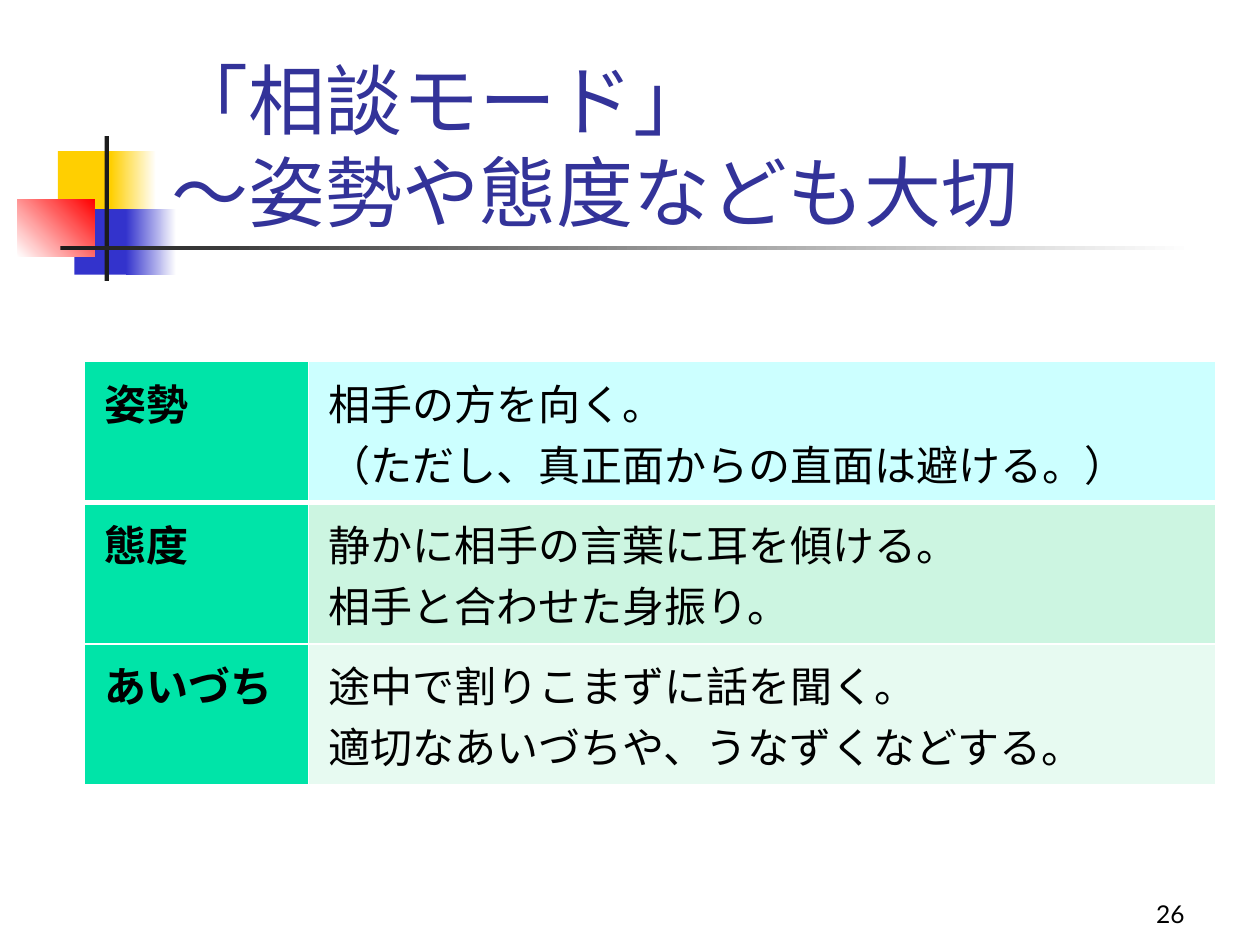
import pptx
import pptx.util
import pptx.dml.color
import pptx.enum.shapes
import pptx.enum.text
import pptx.oxml
import pptx.oxml.ns

WIDE, HIGH = 10, 7.5
LATIN, KANJI = "Lato", "Noto Sans CJK JP"
HUES = {
    "gold": "FFCF01", "blue": "3333CC", "red": "FF0000", "dark": "1C1C1C",
    "white": "FFFFFF", "title": "333399", "text": "000000", "head": "00E4A8",
    "sky": "CCFFFF", "mint": "CCF5E1", "pale": "E7FAF1",
}
ROWS = [
    ("姿勢", "相手の方を向く。\n（ただし、真正面からの直面は避ける。）", "sky"),
    ("態度", "静かに相手の言葉に耳を傾ける。\n相手と合わせた身振り。", "mint"),
    ("あいづち", "途中で割りこまずに話を聞く。\n適切なあいづちや、うなずくなどする。", "pale"),
]
# Percent of slide width and height, then one hue or a blend of two, and its angle
DECOR = [
    ((4.6, 16, 4.8, 6.93), ("gold",), 0),
    ((8.8, 16, 3.6, 6.93), ("gold", "white"), 0),
    ((5.9, 22.13, 4.6, 6.93), ("blue",), 0),
    ((10, 22.13, 4, 6.93), ("blue", "white"), 0),
    ((1.4, 21.07, 6.1, 6.13), ("white", "red"), 45),
    ((8.3, 14.4, 0.35, 15.33), ("dark",), 0),
    ((4.8, 26, 90, 0.45), ("dark", "white"), 0),
]


def hue(name):
    return pptx.dml.color.RGBColor.from_string(HUES[name])


def share(x, y, w, h):
    """Turn percentages of the slide into lengths."""
    return [pptx.util.Inches(part * side / 100)
            for part, side in zip((x, y, w, h), (WIDE, HIGH) * 2)]


def style(para, size, tint, east=KANJI, bold=False, align=None):
    font = para.font
    font.name, font.size, font.bold = LATIN, pptx.util.Pt(size), bold
    font.color.rgb = hue(tint)
    para.alignment = align
    # East Asian face must be set on each run to take effect
    for run in para.runs:
        props = run._r.get_or_add_rPr()
        node = pptx.oxml.parse_xml(
            f'<a:ea {pptx.oxml.ns.nsdecls("a")} typeface="{east}"/>')
        props.append(node)


def block(slide, place, tints, angle):
    box = slide.shapes.add_shape(
        pptx.enum.shapes.MSO_SHAPE.RECTANGLE, *share(*place))
    box.shadow.inherit = False
    box.line.fill.background()
    if len(tints) == 1:
        box.fill.solid()
        box.fill.fore_color.rgb = hue(tints[0])
        return
    box.fill.gradient()
    box.fill.gradient_angle = angle
    for stop, tint, spot in zip(box.fill.gradient_stops, tints, (0, 1)):
        stop.color.rgb = hue(tint)
        stop.position = spot


def title(slide, text):
    head = slide.shapes.title
    head.left, head.top, head.width, head.height = share(12.6, 9.07, 85.2, 16.67)
    frame = head.text_frame
    frame.text = text
    frame.word_wrap = True
    frame.auto_size = pptx.enum.text.MSO_AUTO_SIZE.NONE
    frame.vertical_anchor = pptx.enum.text.MSO_ANCHOR.BOTTOM
    style(frame.paragraphs[0], 44, "title", LATIN,
          align=pptx.enum.text.PP_ALIGN.LEFT)


def number(slide, text):
    frame = slide.shapes.add_textbox(*share(74.2, 92.27, 20.8, 6.67)).text_frame
    frame.text = text
    frame.word_wrap = True
    frame.vertical_anchor = pptx.enum.text.MSO_ANCHOR.BOTTOM
    style(frame.paragraphs[0], 14, "text",
          align=pptx.enum.text.PP_ALIGN.RIGHT)


def border(cell, base):
    """Draw white cell edges, the lower one base points thick."""
    props = cell._tc.get_or_add_tcPr()
    for spot, (side, size) in enumerate(
            (("L", 1), ("R", 1), ("T", 1), ("B", base))):
        props.insert(spot, pptx.oxml.parse_xml(
            f'<a:ln{side} {pptx.oxml.ns.nsdecls("a")} w="{size * 12700}">'
            f'<a:solidFill><a:srgbClr val="{HUES["white"]}"/></a:solidFill>'
            f'</a:ln{side}>'))


def fill(cell, text, tint, bold, base):
    cell.text = text
    cell.margin_left = cell.margin_right = pptx.util.Inches(0.16)
    cell.margin_top = cell.margin_bottom = pptx.util.Inches(0.08)
    cell.fill.solid()
    cell.fill.fore_color.rgb = hue(tint)
    border(cell, base)
    for para in cell.text_frame.paragraphs:
        style(para, 24, "text", bold=bold,
              align=pptx.enum.text.PP_ALIGN.JUSTIFY)


def table(slide, rows):
    grid = slide.shapes.add_table(
        len(rows), 2, *share(6.7, 38.27, 89.8, 44.8)).table
    grid.first_row = grid.horz_banding = False
    for col, width in zip(grid.columns, (1.78, 7.2)):
        col.width = pptx.util.Inches(width)
    for row, (name, text, tint) in enumerate(rows):
        base = 3 if row == 0 else 1
        fill(grid.cell(row, 0), name, "head", True, base)
        fill(grid.cell(row, 1), text, tint, False, base)


def main():
    deck = pptx.Presentation()
    deck.slide_width = pptx.util.Inches(WIDE)
    deck.slide_height = pptx.util.Inches(HIGH)
    slide = deck.slides.add_slide(deck.slide_layouts[5])
    for place, tints, angle in DECOR:
        block(slide, place, tints, angle)
    title(slide, "「相談モード」\v～姿勢や態度なども大切")
    number(slide, "26")
    table(slide, ROWS)
    deck.save("out.pptx")


if __name__ == "__main__":
    main()
